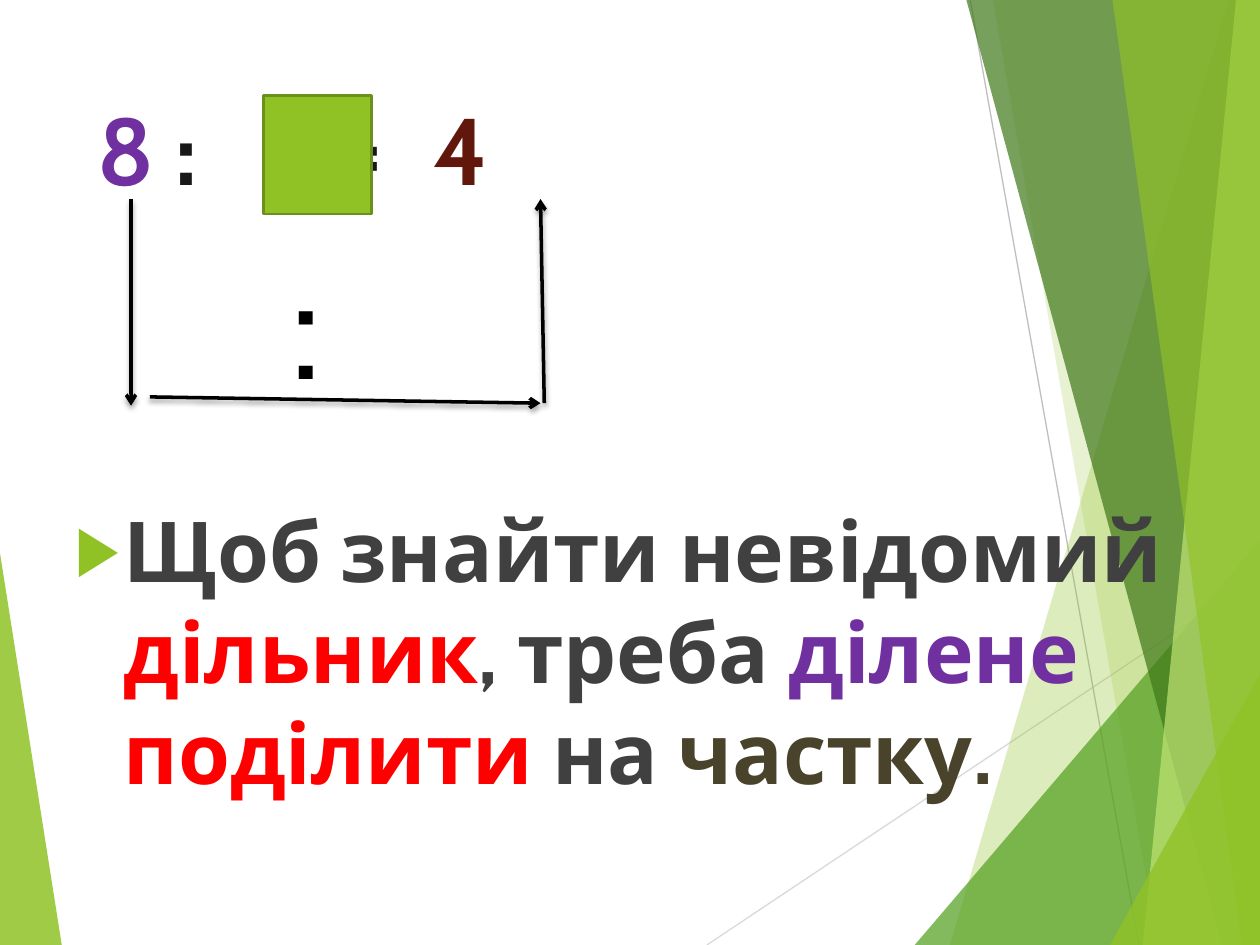
from lxml import etree
from pptx import Presentation
from pptx import util as u
from pptx.dml.color import RGBColor
from pptx.enum import shapes, text
from pptx.oxml import ns

WHITE = RGBColor(0xFF, 0xFF, 0xFF)
BLACK = RGBColor(0x00, 0x00, 0x00)
INK = RGBColor(0x18, 0x18, 0x18)
GREY = RGBColor(0x40, 0x40, 0x40)
SILVER = RGBColor(0xBF, 0xBF, 0xBF)
PALE = RGBColor(0xD9, 0xD9, 0xD9)
LIME = RGBColor(0x90, 0xC2, 0x26)
LIGHT_LIME = RGBColor(0xC0, 0xE4, 0x74)
OLIVE = RGBColor(0x6B, 0x90, 0x1C)
GREEN = RGBColor(0x54, 0xA0, 0x21)
FOREST = RGBColor(0x3F, 0x78, 0x19)
PURPLE = RGBColor(0x70, 0x30, 0xA0)
MAROON = RGBColor(0x62, 0x17, 0x0D)
RED = RGBColor(0xFF, 0x00, 0x00)
BROWN = RGBColor(0x48, 0x43, 0x2A)


def add_node(parent, tag, **attributes):
    node = etree.SubElement(parent, ns.qn(tag))
    for name, value in attributes.items():
        node.set(name, str(value))
    return node


class Painter:
    font = "Cabin"

    def __init__(self, page):
        self.page = page

    def facet(self, points, color, opacity):
        corners = [(u.Inches(x), u.Inches(y)) for x, y in points]
        builder = self.page.shapes.build_freeform(*corners[0])
        builder.add_line_segments(corners[1:], close=True)
        shape = builder.convert_to_shape()
        shape.shadow.inherit = False
        shape.fill.solid()
        shape.fill.fore_color.rgb = color
        shape.line.fill.background()
        tint = shape._element.spPr.find(".//" + ns.qn("a:srgbClr"))
        add_node(tint, "a:alpha", val=opacity * 1000)

    def line(self, start, end, color, width):
        ends = [u.Inches(value) for value in (*start, *end)]
        line = self.page.shapes.add_connector(shapes.MSO_CONNECTOR.STRAIGHT, *ends)
        line.line.color.rgb = color
        line.line.width = u.Pt(width)
        return line, add_node(line._element.spPr, "a:effectLst")

    def arrow(self, start, end):
        line, effects = self.line(start, end, BLACK, 2)
        add_node(line._element.spPr.find(ns.qn("a:ln")), "a:tailEnd", type="arrow")
        shadow = add_node(effects, "a:outerShdw", blurRad=u.Pt(3), dist=u.Pt(2),
                          dir=90 * 60000, rotWithShape=0)
        add_node(add_node(shadow, "a:srgbClr", val=BLACK), "a:alpha", val=35000)

    def square(self, left, top, width, height):
        box = self.page.shapes.add_shape(
            shapes.MSO_SHAPE.RECTANGLE, *map(u.Inches, (left, top, width, height)))
        box.shadow.inherit = False
        box.fill.solid()
        box.fill.fore_color.rgb = LIME
        box.line.color.rgb = OLIVE
        box.line.width = u.Pt(1.5)

    def add_spans(self, para, spans, size, bold=True):
        for words, color in spans:
            span = para.add_run()
            span.text = words
            span.font.name = self.font
            span.font.size = u.Pt(size)
            span.font.bold = bold
            span.font.color.rgb = color

    def placeholder(self, box, area, spans, size):
        box.left, box.top, box.width, box.height = map(u.Inches, area)
        tree = box._element.getparent()
        tree.append(box._element)
        frame = box.text_frame
        frame.word_wrap = True
        frame.auto_size = text.MSO_AUTO_SIZE.NONE
        frame.vertical_anchor = text.MSO_ANCHOR.TOP
        para = frame.paragraphs[0]
        para.alignment = text.PP_ALIGN.LEFT
        self.add_spans(para, spans, size)
        return para

    def title(self, area, spans, size, stops):
        para = self.placeholder(self.page.shapes.title, area, spans, size)
        tabs = add_node(para._p.get_or_add_pPr(), "a:tabLst")
        for stop in stops:
            add_node(tabs, "a:tab", pos=u.Inches(stop), algn="l")

    def rule(self, area, spans, size):
        para = self.placeholder(self.page.placeholders[1], area, spans, size)
        para.space_before = u.Pt(10)
        properties = para._p.get_or_add_pPr()
        properties.set("marL", str(u.Inches(0.38)))
        properties.set("indent", str(u.Inches(-0.38)))
        add_node(add_node(properties, "a:buClr"), "a:srgbClr", val=LIME)
        add_node(properties, "a:buSzPct", val=80000)
        add_node(properties, "a:buFont", typeface="Arial")
        add_node(properties, "a:buChar", char="▶")

    def sign(self, area, words, size):
        box = self.page.shapes.add_textbox(*map(u.Inches, area))
        box.text_frame.word_wrap = False
        self.add_spans(box.text_frame.paragraphs[0], [(words, BLACK)], size, bold=False)


def main():
    deck = Presentation()
    deck.slide_width, deck.slide_height = u.Inches(10), u.Inches(7.5)
    page = deck.slides.add_slide(deck.slide_layouts[1])
    page.background.fill.solid()
    page.background.fill.fore_color.rgb = WHITE
    painter = Painter(page)

    painter.facet([(0, 4.39), (0.49, 7.5), (0, 7.5)], LIME, 85)
    painter.line((5.61, 7.5), (10, 4.57), PALE, 0.75)
    painter.line((7.7, 0), (9.04, 7.5), SILVER, 0.75)
    for top_left, top, bottom_left, color, opacity in [
        (9.75, 0, 7.54, LIME, 30),
        (7.88, 0, 9.19, LIME, 20),
        (10, 4.29, 7.26, GREEN, 72),
        (7.67, 0, 9.7, FOREST, 70),
        (9.81, 0, 9.07, LIGHT_LIME, 70),
        (8.83, 0, 9.86, LIME, 65),
        (10, 5.35, 8.81, LIME, 80),
    ]:
        painter.facet([(top_left, top), (bottom_left, 7.5), (10, 7.5), (10, top)],
                      color, opacity)

    painter.title((0.67, 0.67, 6.94, 1.44),
                  [("8 ", PURPLE), (":\t=\t", INK), ("4", MAROON)], 54, (1.9, 2.67))
    painter.rule((0.5, 3.91, 9, 3.01), [
        ("Щоб знайти невідомий ", GREY),
        ("дільник", RED),
        (", треба ", GREY),
        ("ділене ", PURPLE),
        ("поділити", RED),
        (" на ", GREY),
        ("частку.", BROWN),
    ], 48)

    painter.arrow((1.04, 1.58), (1.04, 3.22))
    painter.arrow((1.19, 3.15), (4.29, 3.2))
    painter.arrow((4.32, 3.2), (4.29, 1.58))
    painter.square(2.09, 0.76, 0.86, 0.94)
    painter.sign((2.21, 1.74, 0.52, 1.58), ":", 88)
    deck.save("out.pptx")


if __name__ == "__main__":
    main()
